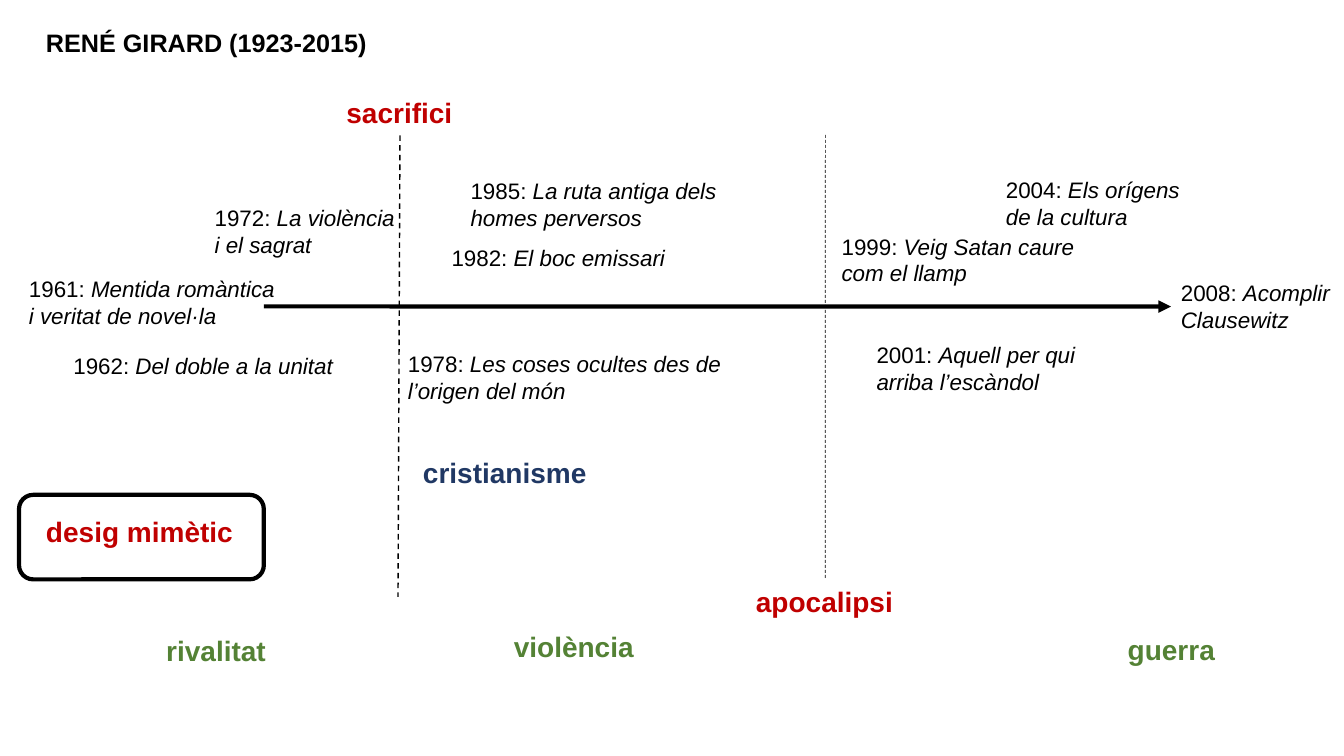
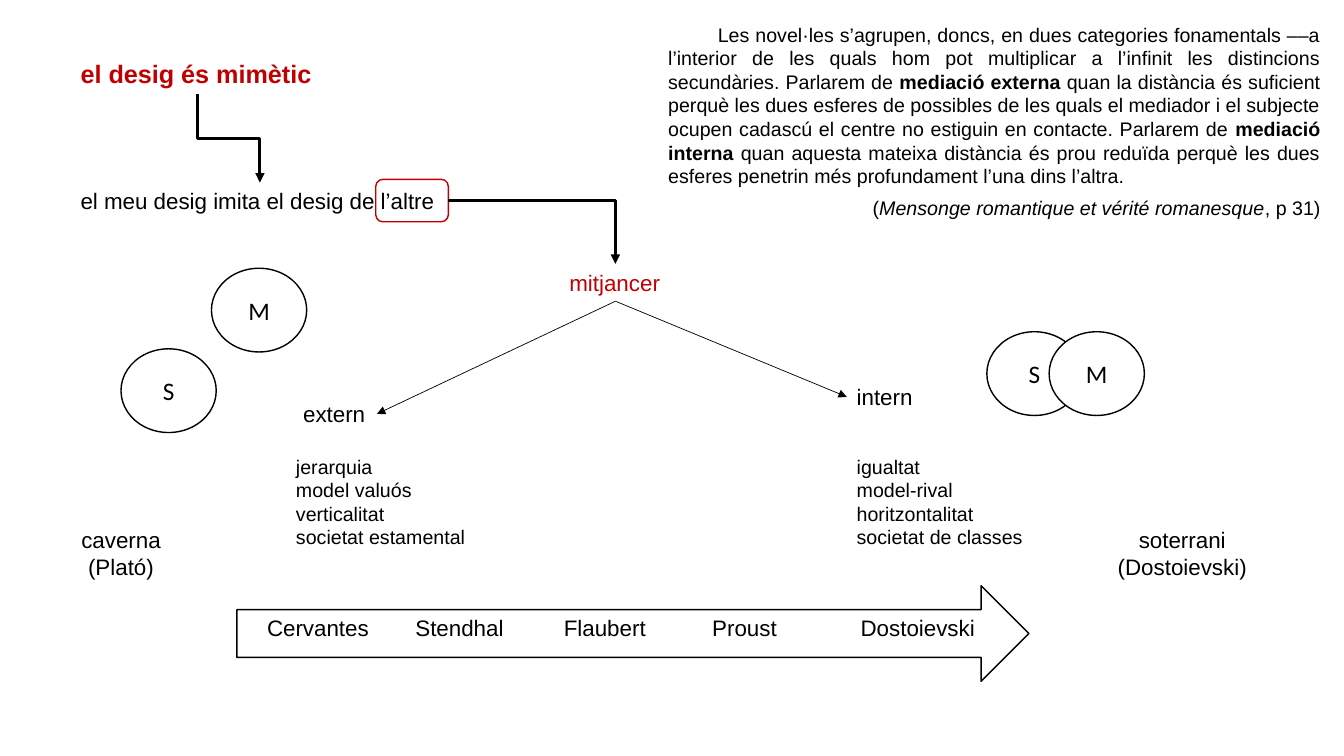
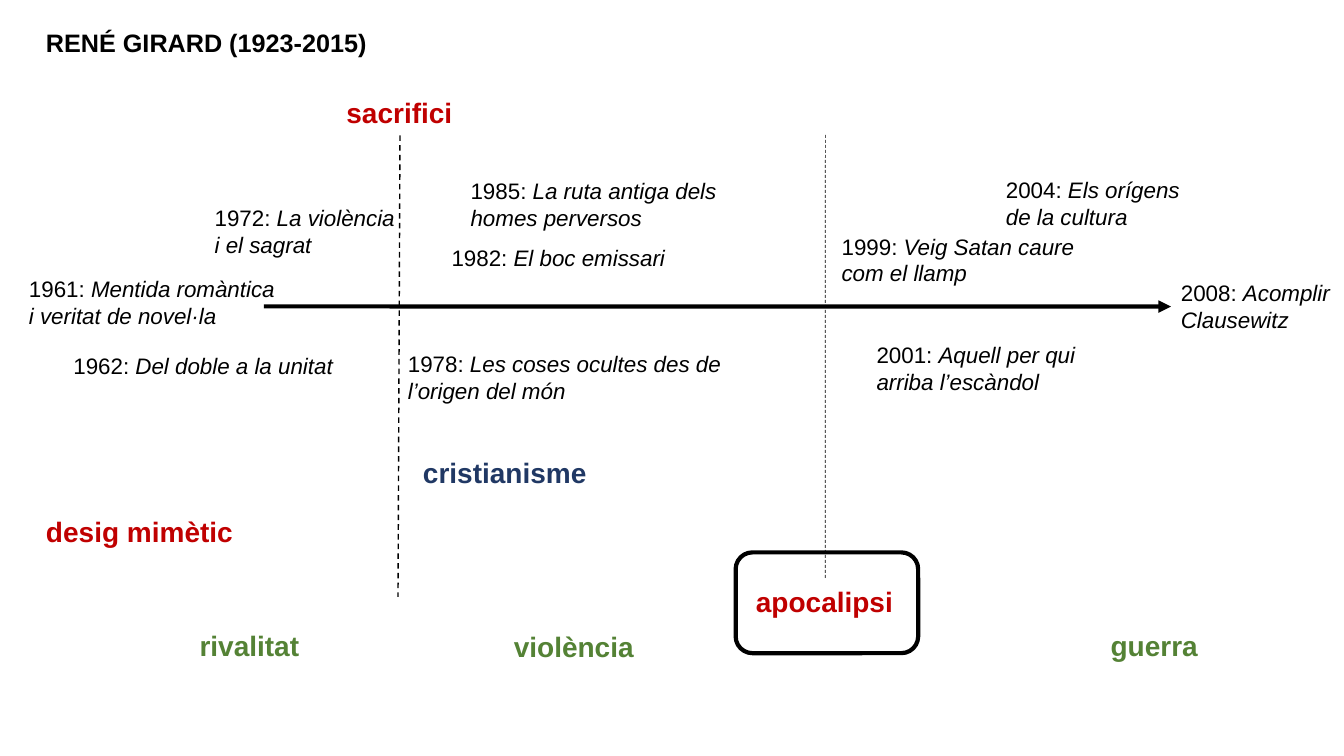
from lxml import etree
from pptx import Presentation
from pptx.dml.color import RGBColor
from pptx.enum.dml import MSO_LINE
from pptx.enum.shapes import MSO_CONNECTOR, MSO_SHAPE
from pptx.enum.text import MSO_ANCHOR, MSO_AUTO_SIZE, PP_ALIGN
from pptx.oxml.ns import qn
from pptx.util import Cm, Pt

BLACK = RGBColor(0x00, 0x00, 0x00)
WHITE = RGBColor(0xFF, 0xFF, 0xFF)
RED = RGBColor(0xC0, 0x00, 0x00)
GREEN = RGBColor(0x54, 0x82, 0x35)
NAVY = RGBColor(0x20, 0x38, 0x64)

LEFT, CENTER = PP_ALIGN.LEFT, PP_ALIGN.CENTER
RIGHT, JUSTIFY = PP_ALIGN.RIGHT, PP_ALIGN.JUSTIFY
STRAIGHT, ELBOW = MSO_CONNECTOR.STRAIGHT, MSO_CONNECTOR.ELBOW
ROUNDED, OVAL = MSO_SHAPE.ROUNDED_RECTANGLE, MSO_SHAPE.OVAL
RIGHT_ARROW = MSO_SHAPE.RIGHT_ARROW
TOP_SIDE, LEFT_SIDE, BOTTOM_SIDE, RIGHT_SIDE = range(4)
PLAIN, BOLD, ITALIC = "plain", "bold", "italic"


def add_text(slide, text, box, size=16, color=BLACK, bold=False, align=LEFT,
             font="Arial", wrap=False, space_after=0, preset=None,
             outline=BLACK, outline_width=1):
    """Add a text box or preset shape; a paragraph is a string or (text, style) runs."""
    lengths = [Cm(value) for value in box]
    if preset is None:
        shape = slide.shapes.add_textbox(*lengths)
        shape.text_frame.auto_size = MSO_AUTO_SIZE.SHAPE_TO_FIT_TEXT
    else:
        shape = slide.shapes.add_shape(preset, *lengths)
        shape.shadow.inherit = False
        shape.fill.solid()
        shape.fill.fore_color.rgb = WHITE
        shape.line.color.rgb = outline
        shape.line.width = Pt(outline_width)
        shape.text_frame.vertical_anchor = MSO_ANCHOR.MIDDLE
    frame = shape.text_frame
    frame.word_wrap = wrap
    for index, content in enumerate(text):
        paragraph = frame.paragraphs[0] if index == 0 else frame.add_paragraph()
        paragraph.alignment = align
        paragraph.space_after = Pt(space_after)
        runs = [(content, PLAIN)] if isinstance(content, str) else content
        for words, style in runs:
            run = paragraph.add_run()
            run.text = words
            run.font.name = font
            run.font.size = Pt(size)
            run.font.color.rgb = color
            run.font.bold = bold or style == BOLD
            run.font.italic = style == ITALIC
    return shape


def add_line(slide, ends, width, dashed=False, arrow=False, kind=STRAIGHT,
             start=None, finish=None):
    """Add a connector; start and finish are (shape, side) pairs to join."""
    connector = slide.shapes.add_connector(kind, *[Cm(value) for value in ends])
    connector.line.color.rgb = BLACK
    connector.line.width = Pt(width)
    if dashed:
        connector.line.dash_style = MSO_LINE.DASH
    properties = connector._element.spPr
    if arrow:
        etree.SubElement(properties.find(qn("a:ln")), qn("a:tailEnd"), type="triangle")
    etree.SubElement(properties, qn("a:effectLst"))
    if start:
        connector.begin_connect(*start)
    if finish:
        connector.end_connect(*finish)
    return connector


presentation = Presentation()
presentation.slide_width = Cm(33.87)
presentation.slide_height = Cm(19.05)
blank = presentation.slide_layouts[6]
first_timeline, mediation, last_timeline = [
    presentation.slides.add_slide(blank) for _ in range(3)]

# Timeline content: year, title lines, left, top, width
WORKS = [
    ("1962", ["Del doble a la unitat"], 1.6, 8.76, 7.14),
    ("1978", ["Les coses ocultes des de", "l’origen del món"], 10.03, 8.71, 8.66),
    ("1982", ["El boc emissari"], 11.13, 6.02, 5.97),
    ("1985", ["La ruta antiga dels", "homes perversos"], 11.61, 4.34, 6.93),
    ("1999", ["Veig Satan caure", "com el llamp"], 20.96, 5.74, 6.6),
    ("2001", ["Aquell per qui", "arriba l’escàndol"], 21.84, 8.48, 5.74),
    ("2004", ["Els orígens", "de la cultura"], 25.1, 4.32, 5.11),
    ("2008", ["Acomplir", "Clausewitz"], 29.51, 6.91, 4.32),
    ("1961", ["Mentida romàntica", "i veritat de novel·la"], 0.48, 6.81, 6.78),
    ("1972", ["La violència", "i el sagrat"], 5.16, 5.03, 5.26),
]
CONCEPTS = [
    ("desig mimètic", RED, 0.91, 12.83, 5.26),
    ("sacrifici", RED, 8.48, 2.29, 3.2),
    ("apocalipsi", RED, 18.8, 14.61, 3.99),
    ("violència", GREEN, 12.7, 15.75, 3.56),
    ("cristianisme", NAVY, 10.41, 11.35, 4.67),
]

# Each timeline frames one concept and places two others
TIMELINES = [
    (first_timeline, (0.48, 12.47, 6.17, 2.13), (3.94, 15.85), (28.17, 15.82)),
    (last_timeline, (18.54, 13.92, 4.6, 2.54), (4.78, 15.72), (27.74, 15.72)),
]
for slide, frame_box, rivalry, war in TIMELINES:
    add_text(slide, [], frame_box, preset=ROUNDED, outline_width=3)
    add_text(slide, ["RENÉ GIRARD (1923-2015)"], (0.91, 0.56, 8.66, 1.02),
             size=18, bold=True)

    labels = {}
    for year, title, left, top, width in WORKS:
        lines = [[(line, ITALIC)] for line in title]
        lines[0].insert(0, (f"{year}: ", PLAIN))
        height = 0.94 if len(title) == 1 else 1.63
        labels[year] = add_text(slide, lines, (left, top, width, height))

    moving = [("rivalitat", GREEN, *rivalry, 3.05), ("guerra", GREEN, *war, 2.72)]
    for name, color, left, top, width in CONCEPTS + moving:
        labels[name] = add_text(slide, [name], (left, top, width, 1.12),
                                size=20, color=color, bold=True)

    add_line(slide, (6.65, 7.72, 29.51, 7.72), 3, arrow=True,
             finish=(labels["2008"], LEFT_SIDE))
    add_line(slide, (10.08, 3.4, 10.03, 15.04), 1, dashed=True,
             start=(labels["sacrifici"], BOTTOM_SIDE))
    add_line(slide, (20.8, 3.4, 20.8, 14.6), 0.5, dashed=True,
             finish=(labels["apocalipsi"], TOP_SIDE))

# Mediation: authors in the wide arrow, set on even tab stops
add_text(mediation, [], (5.97, 14.76, 19.96, 2.41), preset=RIGHT_ARROW)
authors = ["Cervantes", "Stendhal", "Flaubert", "Proust", "Dostoievski"]
author_row = add_text(mediation, ["\t".join(authors)], (6.48, 15.34, 18.57, 0.94))
row_properties = author_row.text_frame.paragraphs[0]._p.get_or_add_pPr()
tab_list = etree.SubElement(row_properties, qn("a:tabLst"))
for stop in range(1, len(authors)):
    etree.SubElement(tab_list, qn("a:tab"), pos=str(Cm(3.74 * stop)), algn="l")

# Mediation: from desire to the two mediators
add_text(mediation, [], (9.47, 4.52, 1.83, 1.07), preset=ROUNDED, outline=RED)
add_text(mediation, ["el desig és mimètic"], (1.78, 1.35, 6.4, 1.02),
         size=18, color=RED, bold=True)
add_text(mediation, ["el meu desig imita el desig de l’altre"],
         (1.78, 4.6, 9.53, 0.94))
mediator = add_text(mediation, ["mitjancer"], (14.1, 6.65, 2.82, 0.94), color=RED)
external = add_text(mediation, ["extern"], (7.39, 9.96, 2.11, 0.94))
internal = add_text(mediation, ["intern"], (21.34, 9.53, 1.93, 0.94))
for target, side, ends in [(external, RIGHT_SIDE, (15.51, 7.59, 9.5, 10.43)),
                           (internal, LEFT_SIDE, (15.51, 7.59, 21.34, 10))]:
    add_line(mediation, ends, 0.5, arrow=True,
             start=(mediator, BOTTOM_SIDE), finish=(target, side))

# Mediation: stepped arrow turned to run downwards, then one with a single bend
step = add_line(mediation, (6.87, 2.7, 4.65, 4.28), 2.25, arrow=True, kind=ELBOW)
step._element.spPr.find(qn("a:xfrm")).set("rot", "16200000")
bend = add_line(mediation, (11.3, 5.05, 15.51, 6.65), 2.25, arrow=True, kind=ELBOW)
bend._element.spPr.find(qn("a:prstGeom")).set("prst", "bentConnector2")

# Mediation: traits and images of each side
for left, width, traits in [
        (7.21, 4.8, ["jerarquia", "model valuós", "verticalitat", "societat estamental"]),
        (21.34, 4.72, ["igualtat", "model-rival", "horitzontalitat", "societat de classes"])]:
    add_text(mediation, traits, (left, 11.33, width, 2.64), size=14)
for left, width, lines in [(1.78, 2.54, ["caverna", "(Plató)"]),
                           (27.89, 3.81, ["soterrani", "(Dostoievski)"])]:
    add_text(mediation, lines, (left, 13.13, width, 1.63), align=CENTER)

# Mediation: subject and mediator circles, apart and overlapping
for letter, left, top in [("S", 3.05, 8.79), ("M", 5.33, 6.76),
                          ("S", 24.87, 8.36), ("M", 26.44, 8.36)]:
    add_text(mediation, [letter], (left, top, 2.4, 2.11), size=18, align=CENTER,
             font="Calibri", preset=OVAL)

# Mediation: quotation and its reference
quotation = add_text(mediation, [
    [("Les novel·les s’agrupen, doncs, en dues categories fonamentals ––a l’interior "
      "de les quals hom pot multiplicar a l’infinit les distincions secundàries. "
      "Parlarem de ", PLAIN),
     ("mediació externa ", BOLD),
     ("quan la distància és suficient perquè les dues esferes de possibles de les "
      "quals el mediador i el subjecte ocupen cadascú el centre no estiguin en "
      "contacte. Parlarem de ", PLAIN),
     ("mediació interna", BOLD),
     (" quan aquesta mateixa distància és prou reduïda perquè les dues esferes "
      "penetrin més profundament l’una dins l’altra.", PLAIN)],
    [("(", PLAIN), ("Mensonge romantique et vérité romanesque", ITALIC),
     (", p 31)", PLAIN)],
], (16.59, 0.45, 16.94, 5.24), size=14, align=JUSTIFY, wrap=True, space_after=6)
quote, reference = quotation.text_frame.paragraphs
quote._p.get_or_add_pPr().set("indent", str(Cm(1.25)))
reference.alignment = RIGHT

presentation.save("out.pptx")
